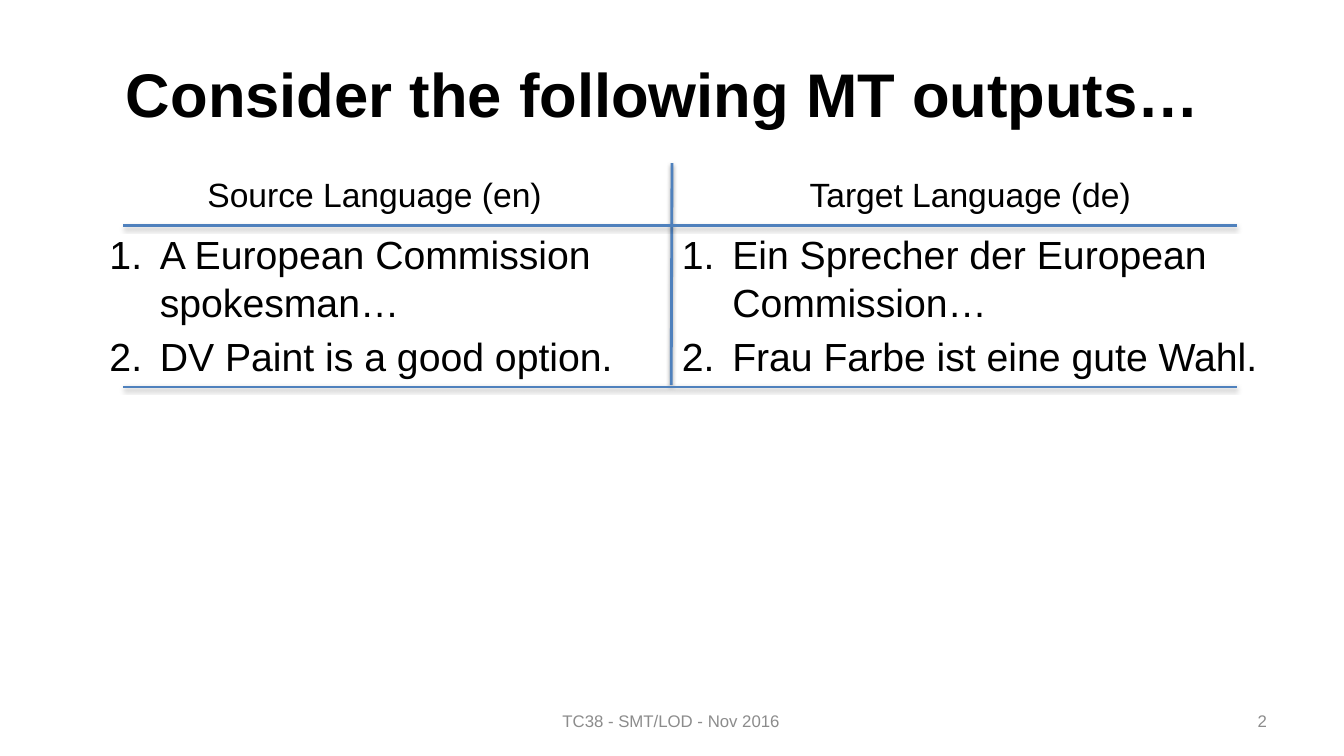
from lxml import etree
from pptx import Presentation
from pptx.dml.color import RGBColor
from pptx.enum.shapes import MSO_CONNECTOR
from pptx.enum.text import MSO_ANCHOR, PP_ALIGN
from pptx.oxml.ns import qn
from pptx.util import Cm, Pt

COLORS = {"text": "000000", "footer": "8C8C8C", "rule": "4F81BD", "shadow": "000000"}
FONT = "Arial"
SLIDE_WIDTH, SLIDE_HEIGHT = 33.87, 19.05
LANGUAGES = [
    ("Source Language (en)",
     ["A European Commission spokesman…", "DV Paint is a good option."]),
    ("Target Language (de)",
     ["Ein Sprecher der European Commission…", "Frau Farbe ist eine gute Wahl."]),
]


def add_text(slide, box, lines, size, color="text", align=PP_ALIGN.LEFT,
             anchor=MSO_ANCHOR.TOP, bold=False, numbered=False):
    """Add a text box with one paragraph per line; box is left, top, width, height in cm."""
    frame = slide.shapes.add_textbox(*map(Cm, box)).text_frame
    frame.word_wrap = True
    frame.vertical_anchor = anchor
    frame.text = "\n".join(lines)
    for index, paragraph in enumerate(frame.paragraphs):
        paragraph.alignment = align
        if numbered:
            properties = paragraph._p.get_or_add_pPr()
            properties.set("marL", str(Cm(1.27)))
            properties.set("indent", str(-Cm(1.27)))
            etree.SubElement(properties, qn("a:buAutoNum"), type="arabicPeriod")
        if index:
            paragraph.space_before = Pt(0.2 * size)
        for run in paragraph.runs:
            run.font.name = FONT
            run.font.size = Pt(size)
            run.font.bold = bold
            run.font.color.rgb = RGBColor.from_string(COLORS[color])


def add_rule(slide, start, end):
    """Draw a blue line with a soft shadow below it."""
    rule = slide.shapes.add_connector(MSO_CONNECTOR.STRAIGHT, *map(Cm, start + end))
    rule.line.color.rgb = RGBColor.from_string(COLORS["rule"])
    rule.line.width = Pt(2)
    effects = etree.SubElement(rule._element.spPr, qn("a:effectLst"))
    shadow = etree.SubElement(effects, qn("a:outerShdw"), blurRad=str(Pt(3.1)),
                              dist=str(Pt(1.6)), dir="5400000", rotWithShape="0")
    color = etree.SubElement(shadow, qn("a:srgbClr"), val=COLORS["shadow"])
    etree.SubElement(color, qn("a:alpha"), val="38000")


def add_title(slide, box):
    add_text(slide, box, ["Consider the following MT outputs… "], 44,
             align=PP_ALIGN.CENTER, anchor=MSO_ANCHOR.MIDDLE, bold=True)


def add_comparison(slide, box):
    """Place the two languages side by side, divided by rules."""
    left, top, width, height = box
    middle = left + width / 2
    head_bottom = top + 1.58
    list_boxes = [(left - 0.59, 14.63), (middle - 0.2, 15.39)]
    for index, (heading, sentences) in enumerate(LANGUAGES):
        heading_left = left - 1.14 + index * 15.01
        add_text(slide, (heading_left, top + 0.16, 14.96, 1.78), [heading], 24,
                 align=PP_ALIGN.CENTER)
        list_left, list_width = list_boxes[index]
        add_text(slide, (list_left, head_bottom, list_width, 4.93), sentences, 28,
                 numbered=True)
    add_rule(slide, (middle - 0.2, top), (middle - 0.22, top + height - 0.05))
    for y in (head_bottom, top + height):
        add_rule(slide, (left, y), (left + width, y))


def add_footer(slide, box):
    left, top, width, height = box
    add_text(slide, box, ["TC38 - SMT/LOD - Nov 2016"], 12, "footer",
             PP_ALIGN.CENTER, MSO_ANCHOR.MIDDLE)
    add_text(slide, (left + 18.16, top, 7.9, height), ["2"], 12, "footer",
             PP_ALIGN.RIGHT, MSO_ANCHOR.MIDDLE)


def main():
    presentation = Presentation()
    presentation.slide_width = Cm(SLIDE_WIDTH)
    presentation.slide_height = Cm(SLIDE_HEIGHT)
    slide = presentation.slides.add_slide(presentation.slide_layouts[6])
    add_title(slide, (1.7, 0.76, 30.48, 3.18))
    add_comparison(slide, (3.1, 4.11, 28.07, 5.64))
    add_footer(slide, (6.12, 17.65, 21.59, 1.02))
    presentation.save("out.pptx")


if __name__ == "__main__":
    main()
